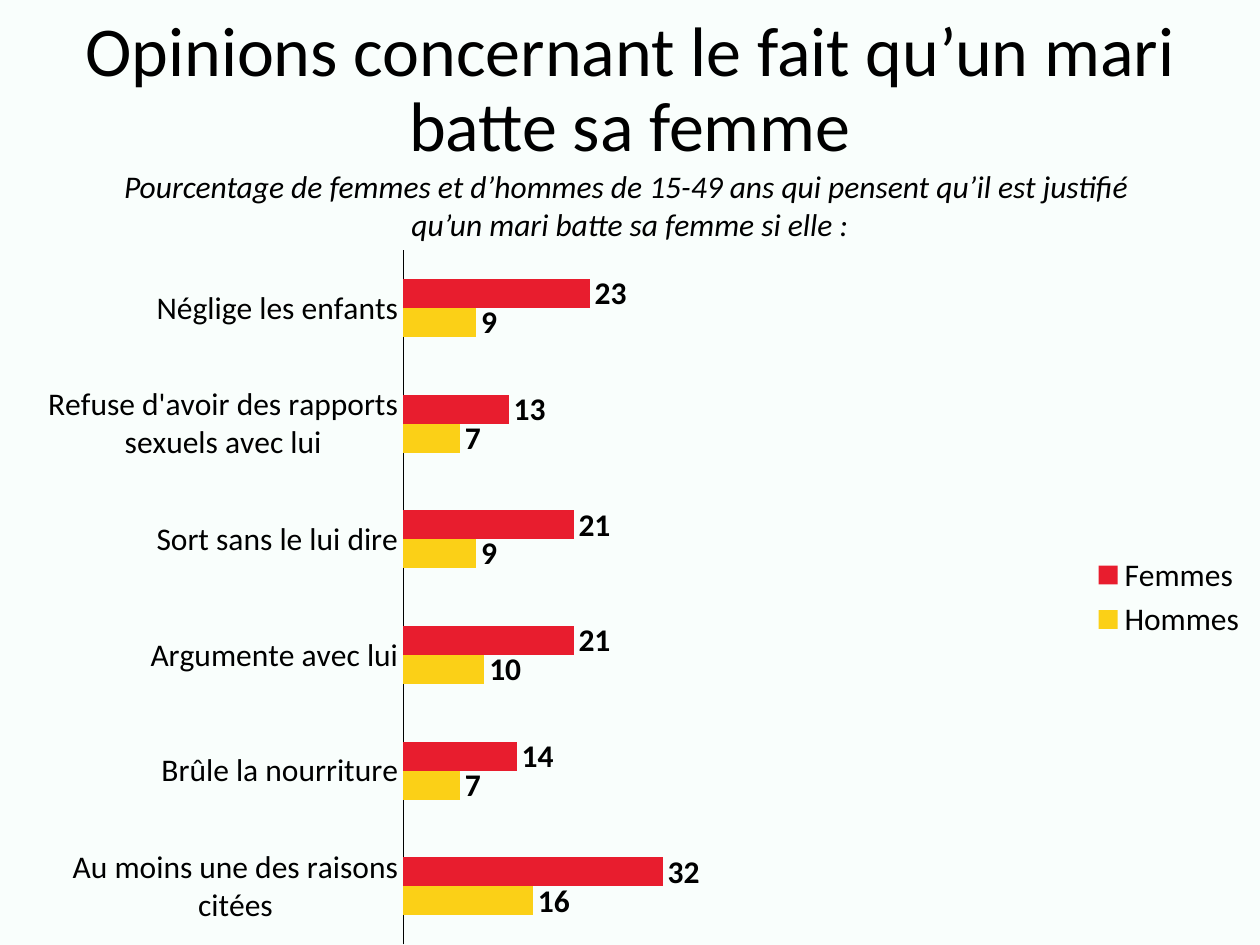
from pptx import Presentation
from pptx import util as u
from pptx.chart.data import CategoryChartData
from pptx.dml.color import RGBColor
from pptx.enum import chart as ch, text
from pptx.oxml import parse_xml
from pptx.oxml.ns import nsdecls

HUES = {"back": "F9FEFC", "ink": "000000", "men": "FBD017", "women": "E81D2E"}
CATS = ["Au moins une des raisons citées", "Brûle la nourriture",
        "Argumente avec lui", "Sort sans le lui dire",
        "Refuse d'avoir des rapports sexuels avec lui", "Néglige les enfants"]
DATA = [("Hommes", "men", [16, 7, 10, 9, 7, 9]),
        ("Femmes", "women", [32, 14, 21, 21, 13, 23])]


def apply(item, **vals):
    for key, val in vals.items():
        setattr(item, key, val)


def hue(name):
    return RGBColor.from_string(HUES[name])


class Deck:
    def __init__(self):
        self.show = Presentation()
        apply(self.show, slide_width=u.Inches(10), slide_height=u.Inches(7.5))
        self.slide = self.show.slides.add_slide(self.show.slide_layouts[5])
        self.paint(self.slide.background.fill, "back")

    def paint(self, fill, name):
        fill.solid()
        fill.fore_color.rgb = hue(name)

    def style(self, font, size, **vals):
        apply(font, name="Calibri", size=u.Pt(size), **vals)
        font.color.rgb = hue("ink")

    def label(self, shape, lines, size, anchor, space=1.0, **vals):
        frame = shape.text_frame
        apply(frame, text="\n".join(lines), word_wrap=True,
              vertical_anchor=anchor, auto_size=text.MSO_AUTO_SIZE.NONE)
        for para in frame.paragraphs:
            apply(para, alignment=text.PP_ALIGN.CENTER, line_spacing=space)
            self.style(para.runs[0].font, size, **vals)

    def title(self, words, box):
        shape = self.slide.shapes.title
        apply(shape, **dict(zip(("left", "top", "width", "height"),
                                map(u.Inches, box))))
        self.label(shape, [words], 40, text.MSO_ANCHOR.MIDDLE, 0.9)

    def note(self, lines, box):
        shape = self.slide.shapes.add_textbox(*map(u.Inches, box))
        self.label(shape, lines, 18, text.MSO_ANCHOR.TOP, italic=True)

    def bars(self, cats, data, box, frame):
        table = CategoryChartData()
        table.categories = cats
        for name, _, vals in data:
            table.add_series(name, vals)
        chart = self.slide.shapes.add_chart(
            ch.XL_CHART_TYPE.BAR_CLUSTERED, *map(u.Inches, box), table).chart
        apply(chart, has_title=False, has_legend=True)
        self.style(chart.font, 10)
        apply(chart.legend, position=ch.XL_LEGEND_POSITION.RIGHT,
              include_in_layout=False)
        self.style(chart.legend.font, 18)
        apply(chart.value_axis, visible=False, has_major_gridlines=False,
              minimum_scale=0, maximum_scale=100)
        axis = chart.category_axis
        none = ch.XL_TICK_MARK.NONE
        apply(axis, major_tick_mark=none, minor_tick_mark=none,
              has_major_gridlines=False)
        self.style(axis.tick_labels.font, 18)
        axis.format.line.width = u.Pt(0.75)
        axis.format.line.color.rgb = hue("ink")
        plot = chart.plots[0]
        apply(plot, gap_width=200, overlap=0, vary_by_categories=False)
        for series, (_, name, _) in zip(plot.series, data):
            self.paint(series.format.fill, name)
            series.invert_if_negative = False
            tags = series.data_labels
            apply(tags, show_value=True,
                  position=ch.XL_LABEL_POSITION.OUTSIDE_END)
            self.style(tags.font, 18, bold=True)
        self.place(chart, frame)

    def place(self, chart, frame):
        area = chart.element.chart.plotArea if hasattr(chart, "element") \
            else chart._chartSpace.chart.plotArea
        for old in area.xpath("c:layout"):
            area.remove(old)
        modes = '<c:xMode val="edge"/><c:yMode val="edge"/>'
        sides = "".join(f'<c:{key} val="{val}"/>' for key, val in zip("xywh", frame))
        area.insert(0, parse_xml(
            f'<c:layout {nsdecls("c")}><c:manualLayout>'
            f'<c:layoutTarget val="inner"/>{modes}{sides}'
            '</c:manualLayout></c:layout>'))


def main():
    deck = Deck()
    deck.title("Opinions concernant le fait qu’un mari batte sa femme",
               (0, 0, 10, 1.45))
    deck.bars(CATS, DATA, (0, 1.98, 10, 5.52), (0.32, 0, 0.644, 1))
    deck.note(["Pourcentage de femmes et d’hommes de 15-49 ans "
               "qui pensent qu’il est justifié ",
               "qu’un mari batte sa femme si elle :"], (0, 1.28, 10, 0.71))
    deck.show.save("out.pptx")


if __name__ == "__main__":
    main()
